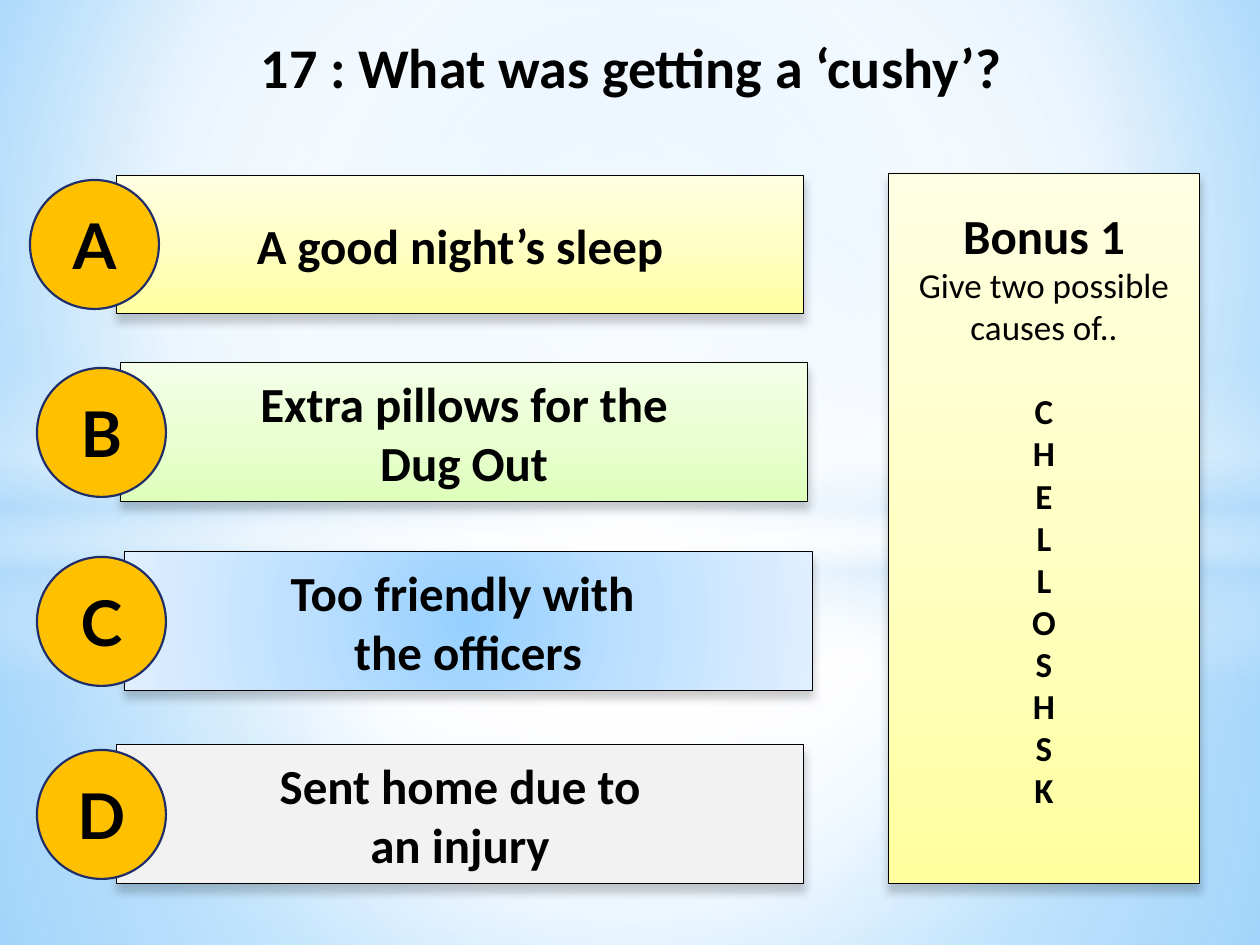
"""Build a quiz slide with four lettered answers and a bonus panel."""
from lxml.etree import SubElement
from pptx import Presentation
from pptx.dml.color import RGBColor
from pptx.enum.shapes import MSO_SHAPE
from pptx.enum.text import MSO_ANCHOR, PP_ALIGN
from pptx.oxml.ns import qn
from pptx.util import Pt

PX = 914400 // 126
W, H = 1260, 945

BLACK = RGBColor(0x00, 0x00, 0x00)
WHITE = RGBColor(0xFF, 0xFF, 0xFF)
AMBER = RGBColor(0xFF, 0xC0, 0x00)
NAVY = RGBColor(0x1F, 0x2E, 0x69)
GREY = RGBColor(0xF2, 0xF2, 0xF2)
MIST = RGBColor(0xB4, 0xDC, 0xFA)
SKY = RGBColor(0x9E, 0xD5, 0xFF)
AZURE = RGBColor(0x5B, 0xB9, 0xFF)
YELLOWS = [RGBColor.from_string(c) for c in ("FFFFA0", "FFFFC5", "FFFFE3")]
GREENS = [RGBColor.from_string(c) for c in ("DEFFBB", "EAFFD3", "F4FFE9")]
BLUES = [RGBColor.from_string(c) for c in ("96D0FF", "BFE1FF", "E0EFFF")]

CENTRE = (50, 50, 50, 50)
RECT, OVAL = MSO_SHAPE.RECTANGLE, MSO_SHAPE.OVAL


def thirds(colours):
    return [(pos, c, 100) for pos, c in zip((0, 50, 100), colours)]


YELLOW_FILL = dict(stops=thirds(YELLOWS), angle=270)
GREEN_FILL = dict(stops=thirds(GREENS), angle=270)
BLUE_FILL = dict(stops=thirds(BLUES), centre=CENTRE)
PAGE_FILL = dict(stops=[(0, SKY, 100), (60, WHITE, 100), (100, AZURE, 100)],
                 centre=(20, 10, 20, 60))

GLOWS = [
    (RECT, (0, 533, W, 412), dict(
        stops=[(0, WHITE, 91), (37, WHITE, 76), (100, MIST, 79)], centre=CENTRE)),
    (RECT, (0, 0, W, 533), dict(
        stops=[(0, WHITE, 89), (48, WHITE, 62), (100, MIST, 79)], centre=CENTRE)),
    (RECT, (0, 365, W, 315), dict(
        stops=[(0, WHITE, 0), (29, WHITE, 30), (45, MIST, 40),
               (55, WHITE, 26), (65, MIST, 60), (100, WHITE, 0)], angle=90)),
    (OVAL, (0, 221, W, 703), dict(
        stops=[(0, WHITE, 100), (54, WHITE, 0)], centre=CENTRE)),
]

TITLE = "17 : What was getting a ‘cushy’?"
ANSWERS = [
    ("A", ["A good night’s sleep"], YELLOW_FILL, 116, 175, 30),
    ("B", ["Extra pillows for the", "Dug Out"], GREEN_FILL, 120, 363, 37),
    ("C", ["Too friendly with ", "the officers"], BLUE_FILL, 124, 552, 37),
    ("D", ["Sent home due to", "an injury"], GREY, 116, 745, 37),
]
BAR_W, BAR_H, BADGE = 688, 139, 129
BONUS_TITLE = "Bonus 1"
BONUS_TASK = "Give two possible causes of.."
BONUS_LETTERS = "CHELLOSHSK"


def add_colour(parent, colour, alpha):
    clr = SubElement(parent, qn("a:srgbClr"), val=str(colour))
    if alpha < 100:
        SubElement(clr, qn("a:alpha"), val=str(alpha * 1000))


def paint(fill, parent, look):
    """Fill with a plain colour, or with a gradient given as a dict."""
    fill.solid()
    if not isinstance(look, dict):
        fill.fore_color.rgb = look
        return
    solid = parent.find(qn("a:solidFill"))
    grad = SubElement(parent, qn("a:gradFill"), rotWithShape="1")
    parent.replace(solid, grad)
    stops = SubElement(grad, qn("a:gsLst"))
    for pos, colour, alpha in look["stops"]:
        add_colour(SubElement(stops, qn("a:gs"), pos=str(pos * 1000)), colour, alpha)
    if "angle" in look:
        SubElement(grad, qn("a:lin"), ang=str(look["angle"] * 60000), scaled="0")
    else:
        way = SubElement(grad, qn("a:path"), path="circle")
        sides = {k: str(v * 1000) for k, v in zip("ltrb", look["centre"])}
        SubElement(way, qn("a:fillToRect"), **sides)


def add_shape(s, kind, box, look, line=None, width=0.5, shadow=False):
    sp = s.shapes.add_shape(kind, *(v * PX for v in box))
    pr = sp._element.spPr
    paint(sp.fill, pr, look)
    if line is None:
        sp.line.fill.background()
    else:
        sp.line.color.rgb = line
        sp.line.width = Pt(width)
    sp.shadow.inherit = False
    if shadow:
        drop = SubElement(pr.find(qn("a:effectLst")), qn("a:outerShdw"),
                          blurRad=str(Pt(5)), dist=str(Pt(4)),
                          dir=str(90 * 60000), rotWithShape="0")
        add_colour(drop, BLACK, 20)
    sp.text_frame.word_wrap = True
    sp.text_frame.vertical_anchor = MSO_ANCHOR.MIDDLE
    return sp


def write(p, lines, size=28, font="Calibri", bold=True, before=0):
    p.alignment = PP_ALIGN.CENTER
    p.space_before = Pt(before)
    for i, line in enumerate(lines):
        if i:
            p.add_line_break()
        r = p.add_run()
        r.text = line
        r.font.size, r.font.name, r.font.bold = Pt(size), font, bold
        r.font.color.rgb = BLACK


def main():
    prs = Presentation()
    prs.slide_width, prs.slide_height = W * PX, H * PX
    s = prs.slides.add_slide(prs.slide_layouts[6])
    fill = s.background.fill
    fill.solid()
    paint(fill, s._element.find(".//" + qn("p:bgPr")), PAGE_FILL)
    for kind, box, look in GLOWS:
        add_shape(s, kind, box, look)

    title = s.shapes.add_textbox(*(v * PX for v in (26, 26, 1211, 134)))
    title.text_frame.word_wrap = True
    write(title.text_frame.paragraphs[0], [TITLE], size=32)

    for _, lines, look, x, y, _ in ANSWERS:
        bar = add_shape(s, RECT, (x, y, BAR_W, BAR_H), look, BLACK, shadow=True)
        write(bar.text_frame.paragraphs[0], lines)
    for letter, _, _, _, y, x in ANSWERS:
        box = (x, y + (BAR_H - BADGE) // 2, BADGE, BADGE)
        badge = add_shape(s, OVAL, box, AMBER, NAVY, 1.25)
        write(badge.text_frame.paragraphs[0], [letter], size=36, font="Lato")

    bonus = add_shape(s, RECT, (888, 173, 312, 711), YELLOW_FILL, BLACK, shadow=True)
    tf = bonus.text_frame
    tf.margin_bottom = 48 * PX
    write(tf.paragraphs[0], [BONUS_TITLE])
    write(tf.add_paragraph(), [BONUS_TASK], size=20, bold=False)
    write(tf.add_paragraph(), BONUS_LETTERS, size=20, before=24)
    prs.save("out.pptx")


if __name__ == "__main__":
    main()
